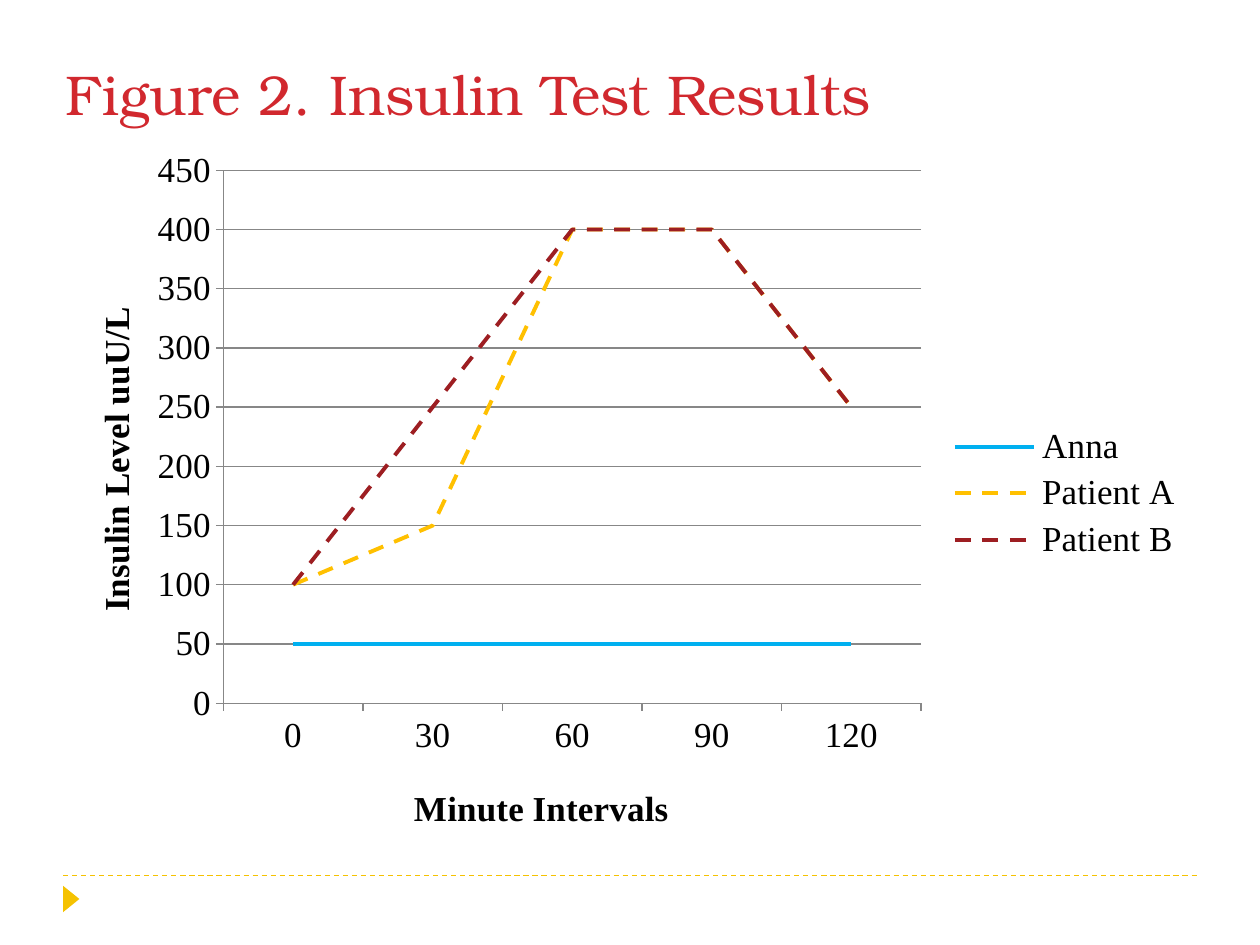
from lxml import etree
from pptx import Presentation
from pptx.chart.data import CategoryChartData
from pptx.dml.color import RGBColor
from pptx.enum.chart import XL_CHART_TYPE, XL_LEGEND_POSITION, XL_TICK_MARK
from pptx.enum.dml import MSO_LINE
from pptx.enum.shapes import MSO_CONNECTOR, MSO_SHAPE
from pptx.enum.text import MSO_ANCHOR, PP_ALIGN
from pptx.oxml.ns import qn
from pptx.util import Inches, Pt

LINE_CHART = XL_CHART_TYPE.LINE
LEGEND_RIGHT = XL_LEGEND_POSITION.RIGHT
TICK_OUT, TICK_NONE = XL_TICK_MARK.OUTSIDE, XL_TICK_MARK.NONE
DASH, SOLID = MSO_LINE.DASH, MSO_LINE.SOLID
STRAIGHT = MSO_CONNECTOR.STRAIGHT
TRIANGLE = MSO_SHAPE.ISOSCELES_TRIANGLE
TOP, LEFT = MSO_ANCHOR.TOP, PP_ALIGN.LEFT

GOLD, RED, BLACK, GREY = "F5C201", "D1282E", "000000", "878787"
TITLE_FONT = {"name": "TeX Gyre Bonum", "size": Pt(32), "bold": False}
CHART_FONT = {"name": "Times New Roman", "size": Pt(20), "bold": False}
MINUTES = ["0", "30", "60", "90", "120"]
SERIES = [
    ("Anna", [50, 50, 50, 50, 50], "00B0F0", SOLID),
    ("Patient A", [100, 150, 400, 400, 250], "FFC000", DASH),
    ("Patient B", [100, 250, 400, 400, 250], "9D1E22", DASH),
]


def rgb(color):
    """Turn a hex string into a colour."""
    return RGBColor.from_string(color)


def apply_format(target, values):
    """Set every attribute named in a dict."""
    for name, value in values.items():
        setattr(target, name, value)


def format_font(font, values, color):
    """Set a font's attributes and colour."""
    apply_format(font, values)
    font.color.rgb = rgb(color)


def format_line(line, color, width, dash=SOLID):
    """Set a line's colour, width in points and dash."""
    line.color.rgb = rgb(color)
    apply_format(line, {"width": Pt(width), "dash_style": dash})


def set_layout(element, index, shares, inner=False):
    """Place a chart part by shares of the chart's size."""
    for layout in element.findall(qn("c:layout")):
        element.remove(layout)
    layout = etree.Element(qn("c:layout"))
    manual = etree.SubElement(layout, qn("c:manualLayout"))
    values = {"layoutTarget": "inner"} if inner else {}
    values.update(xMode="edge", yMode="edge", **shares)
    for name, value in values.items():
        etree.SubElement(manual, qn(f"c:{name}")).set("val", str(value))
    element.insert(index, layout)


def add_title(slide, box, text):
    """Place the slide title in its box."""
    title = slide.shapes.title
    apply_format(title, dict(zip(("left", "top", "width", "height"), map(Inches, box))))
    frame = title.text_frame
    apply_format(frame, {"text": text, "vertical_anchor": TOP, "word_wrap": True})
    paragraph = frame.paragraphs[0]
    paragraph.alignment = LEFT
    format_font(paragraph.runs[0].font, TITLE_FONT, RED)


def format_axis(axis, text, shares):
    """Style an axis and place its title."""
    apply_format(axis, {"major_tick_mark": TICK_OUT, "minor_tick_mark": TICK_NONE})
    format_line(axis.format.line, GREY, 0.75)
    frame = axis.axis_title.text_frame
    frame.text = text
    format_font(frame.paragraphs[0].runs[0].font, {**CHART_FONT, "bold": True}, BLACK)
    set_layout(axis.axis_title._element, 1, shares)


def add_insulin_chart(slide, box):
    """Draw the insulin line chart in its box."""
    data = CategoryChartData()
    data.categories = MINUTES
    for name, values, _, _ in SERIES:
        data.add_series(name, values)
    chart = slide.shapes.add_chart(LINE_CHART, *map(Inches, box), data).chart
    apply_format(chart, {"has_title": False, "has_legend": True})
    format_font(chart.font, CHART_FONT, BLACK)
    apply_format(chart.legend, {"position": LEGEND_RIGHT, "include_in_layout": False})

    plot = chart.plots[0]
    plot.vary_by_categories = False
    for series, (_, _, color, dash) in zip(plot.series, SERIES):
        series.smooth = False
        format_line(series.format.line, color, 2.25, dash)

    value_axis = chart.value_axis
    scale = {"minimum_scale": 0, "maximum_scale": 450, "major_unit": 50}
    apply_format(value_axis, {**scale, "has_major_gridlines": True})
    format_line(value_axis.major_gridlines.format.line, GREY, 0.75)
    format_axis(value_axis, "Insulin Level uuU/L", {"x": 0.03, "y": 0.23})
    format_axis(chart.category_axis, "Minute Intervals", {"x": 0.31, "y": 0.9})
    plot_area = chart._chartSpace.chart.plotArea
    set_layout(plot_area, 0, {"x": 0.149, "y": 0.048, "w": 0.61, "h": 0.746}, True)


def add_footer(slide, left, top, width):
    """Draw the dashed rule and the marker below it."""
    ends = map(Inches, (left, top, left + width, top))
    rule = slide.shapes.add_connector(STRAIGHT, *ends)
    format_line(rule.line, GOLD, 0.75, DASH)
    etree.SubElement(rule._element.spPr, qn("a:effectLst"))
    box = map(Inches, (left - 0.04, top + 0.12, 0.21, 0.13))
    marker = slide.shapes.add_shape(TRIANGLE, *box)
    marker.rotation = 90
    marker.shadow.inherit = False
    marker.fill.solid()
    marker.fill.fore_color.rgb = rgb(GOLD)
    marker.line.fill.background()


def main():
    """Build and save the presentation."""
    presentation = Presentation()
    size = {"slide_width": Inches(10), "slide_height": Inches(7.5)}
    apply_format(presentation, size)
    slide = presentation.slides.add_slide(presentation.slide_layouts[5])
    add_footer(slide, 0.5, 6.95, 9)
    add_insulin_chart(slide, (0.42, 1.08, 9.08, 5.67))
    add_title(slide, (0.42, 0.42, 9.33, 1.08), "Figure 2. Insulin Test Results")
    presentation.save("out.pptx")


if __name__ == "__main__":
    main()
